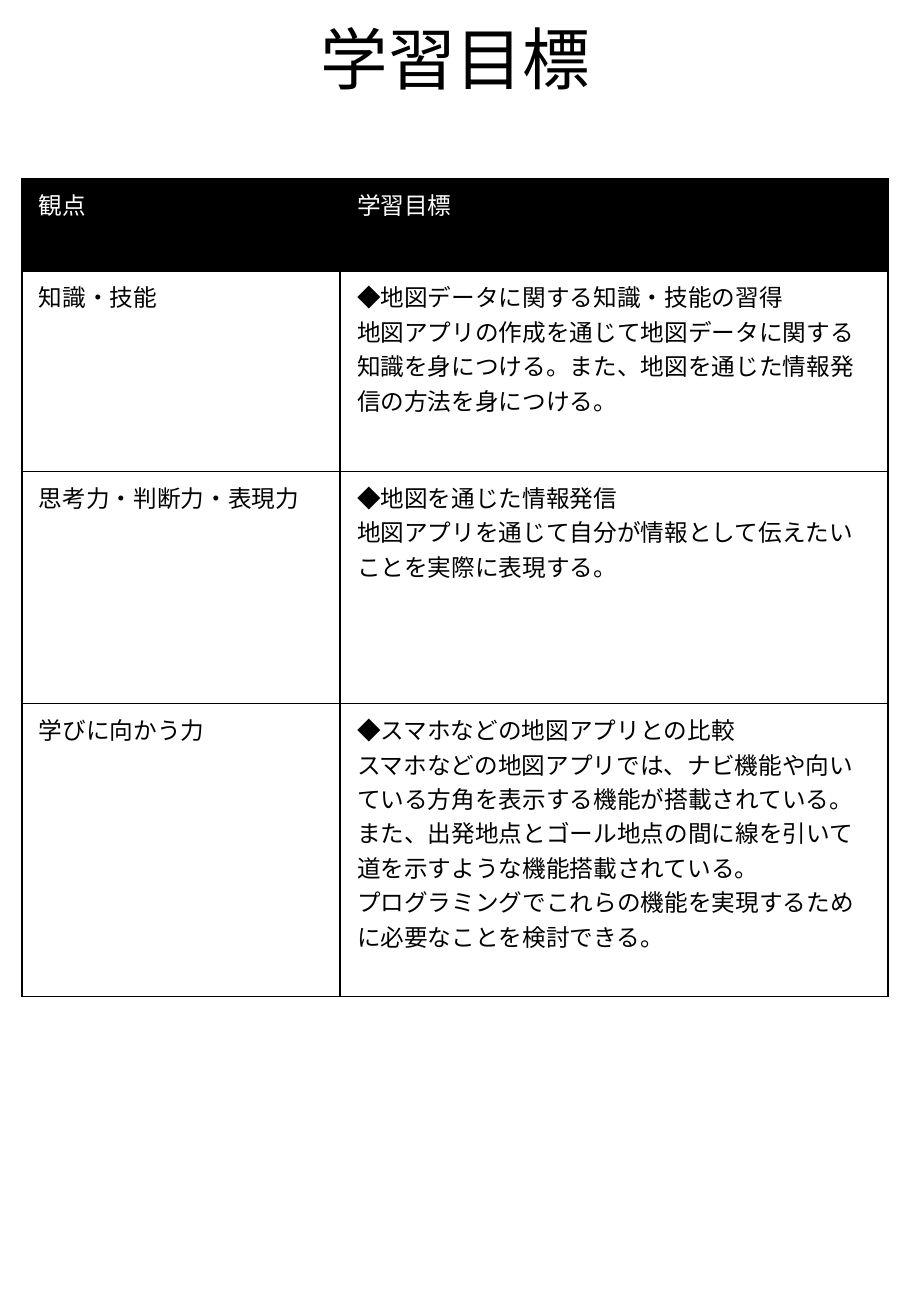
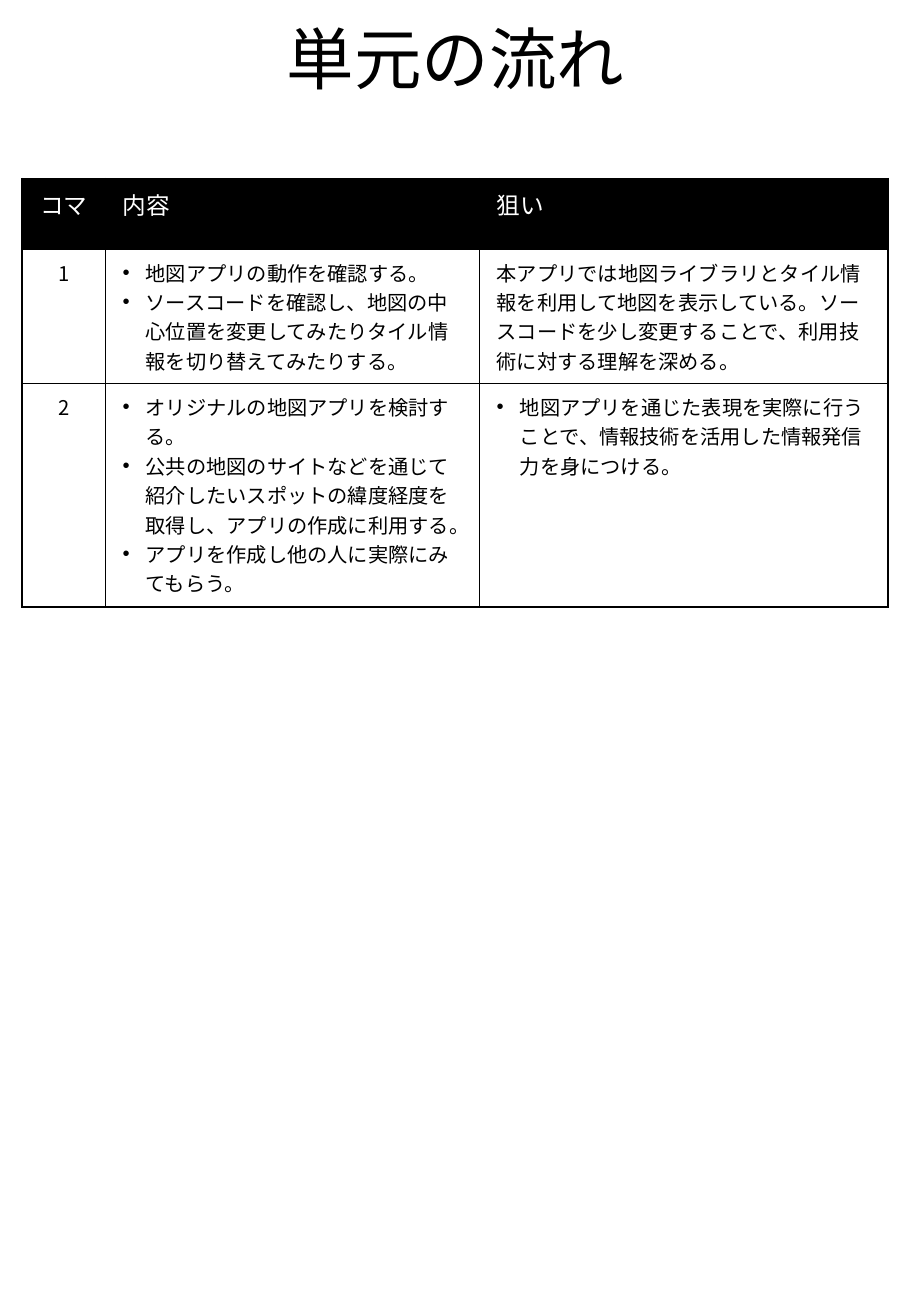
from lxml import etree
from pptx import Presentation
from pptx.dml.color import RGBColor
from pptx.enum.lang import MSO_LANGUAGE_ID
from pptx.enum.text import MSO_ANCHOR, MSO_AUTO_SIZE, PP_ALIGN
from pptx.oxml.ns import qn
from pptx.util import Inches, Pt

LEFT, CENTER = PP_ALIGN.LEFT, PP_ALIGN.CENTER
BOTTOM = MSO_ANCHOR.BOTTOM
NO_AUTOFIT = MSO_AUTO_SIZE.NONE
JAPANESE = MSO_LANGUAGE_ID.JAPANESE
TITLE_ONLY = 5
BULLET = "•"


def color(hex_string):
    return RGBColor.from_string(hex_string)


class Deck:
    """Holds the shared style and the current slide."""

    FONT = "Noto Sans CJK JP"
    BLACK, WHITE = "000000", "FFFFFF"
    TITLE_SIZE, HEADER_SIZE = 40, 14
    BORDER_WIDTH = 1
    INDENT = 0.19

    def __init__(self, width, height):
        self.presentation = Presentation()
        self.presentation.slide_width = Inches(width)
        self.presentation.slide_height = Inches(height)
        self.slide = None

    def add_slide(self, title):
        layout = self.presentation.slide_layouts[TITLE_ONLY]
        self.slide = self.presentation.slides.add_slide(layout)
        shape = self.slide.shapes.title
        shape.left, shape.top = Inches(0.56), Inches(0.06)
        shape.width, shape.height = Inches(6.38), Inches(0.81)
        text_frame = shape.text_frame
        text_frame.text = title
        text_frame.auto_size = NO_AUTOFIT
        text_frame.vertical_anchor = BOTTOM
        paragraph = text_frame.paragraphs[0]
        paragraph.line_spacing = 0.9
        self.format_paragraph(paragraph, self.TITLE_SIZE, self.BLACK, CENTER)

    def format_paragraph(self, paragraph, size, text_color, alignment):
        paragraph.alignment = alignment
        for run in paragraph.runs:
            font = run.font
            font.name, font.size, font.bold = self.FONT, Pt(size), False
            font.color.rgb = color(text_color)
            font.language_id = JAPANESE
            east_asian = etree.SubElement(font._element, qn("a:ea"))
            east_asian.set("typeface", self.FONT)

    def add_bullet(self, paragraph):
        properties = paragraph._p.get_or_add_pPr()
        properties.set("marL", str(Inches(self.INDENT)))
        properties.set("indent", str(-Inches(self.INDENT)))
        etree.SubElement(properties, qn("a:buFont")).set("typeface", "Arial")
        etree.SubElement(properties, qn("a:buChar")).set("char", BULLET)

    def add_borders(self, cell):
        properties = cell._tc.get_or_add_tcPr()
        for side in ("a:lnL", "a:lnR", "a:lnT", "a:lnB"):
            line = etree.SubElement(properties, qn(side))
            line.set("w", str(Pt(self.BORDER_WIDTH)))
            fill = etree.SubElement(line, qn("a:solidFill"))
            etree.SubElement(fill, qn("a:srgbClr")).set("val", self.BLACK)

    def fill_cell(self, cell, text, size, text_color, fill_color, alignment):
        cell.margin_left = cell.margin_right = Inches(0.14)
        cell.margin_top = cell.margin_bottom = Inches(0.07)
        self.add_borders(cell)
        cell.fill.solid()
        cell.fill.fore_color.rgb = color(fill_color)
        lines = text.split("\n")
        cell.text_frame.text = "\n".join(line.lstrip(BULLET) for line in lines)
        for paragraph, line in zip(cell.text_frame.paragraphs, lines):
            self.format_paragraph(paragraph, size, text_color, alignment)
            if line.startswith(BULLET):
                self.add_bullet(paragraph)

    def add_table(self, rows, widths, heights, body_size, first_alignment=LEFT):
        frame = self.slide.shapes.add_table(
            len(rows), len(widths), Inches(0.18), Inches(1.47),
            Inches(sum(widths)), Inches(sum(heights)))
        table = frame.table
        table.first_row = table.horz_banding = False
        for column, width in zip(table.columns, widths):
            column.width = Inches(width)
        for row, height in zip(table.rows, heights):
            row.height = Inches(height)
        # The header row is white on black, the body black on white
        for row_index, texts in enumerate(rows):
            if row_index == 0:
                style = (self.HEADER_SIZE, self.WHITE, self.BLACK)
            else:
                style = (body_size, self.BLACK, self.WHITE)
            for column_index, text in enumerate(texts):
                alignment = LEFT if column_index else first_alignment
                self.fill_cell(table.cell(row_index, column_index), text,
                               *style, alignment)


GOALS = [
    ("観点", "学習目標"),
    ("知識・技能",
     "◆地図データに関する知識・技能の習得\n"
     "地図アプリの作成を通じて地図データに関する知識を身につける。"
     "また、地図を通じた情報発信の方法を身につける。"),
    ("思考力・判断力・表現力",
     "◆地図を通じた情報発信\n"
     "地図アプリを通じて自分が情報として伝えたいことを実際に表現する。"),
    ("学びに向かう力",
     "◆スマホなどの地図アプリとの比較\n"
     "スマホなどの地図アプリでは、ナビ機能や向いている方角を表示する機能が"
     "搭載されている。また、出発地点とゴール地点の間に線を引いて道を示すような"
     "機能搭載されている。\n"
     "プログラミングでこれらの機能を実現するために必要なことを検討できる。"),
]

LESSONS = [
    ("コマ", "内容", "狙い"),
    ("1",
     "•地図アプリの動作を確認する。\n"
     "•ソースコードを確認し、地図の中心位置を変更してみたり"
     "タイル情報を切り替えてみたりする。",
     "本アプリでは地図ライブラリとタイル情報を利用して地図を表示している。"
     "ソースコードを少し変更することで、利用技術に対する理解を深める。"),
    ("2",
     "•オリジナルの地図アプリを検討する。\n"
     "•公共の地図のサイトなどを通じて紹介したいスポットの緯度経度を取得し、"
     "アプリの作成に利用する。\n"
     "•アプリを作成し他の人に実際にみてもらう。",
     "•地図アプリを通じた表現を実際に行うことで、"
     "情報技術を活用した情報発信力を身につける。"),
]


def main():
    deck = Deck(7.5, 10.83)

    # Learning goals
    deck.add_slide("学習目標")
    deck.add_table(GOALS, widths=(2.62, 4.51),
                   heights=(0.76, 1.65, 1.91, 2.41), body_size=14)

    # Flow of the unit
    deck.add_slide("単元の流れ")
    deck.add_table(LESSONS, widths=(0.69, 3.08, 3.36),
                   heights=(0.58, 1.1, 1.84), body_size=12,
                   first_alignment=CENTER)

    deck.presentation.save("out.pptx")


if __name__ == "__main__":
    main()
